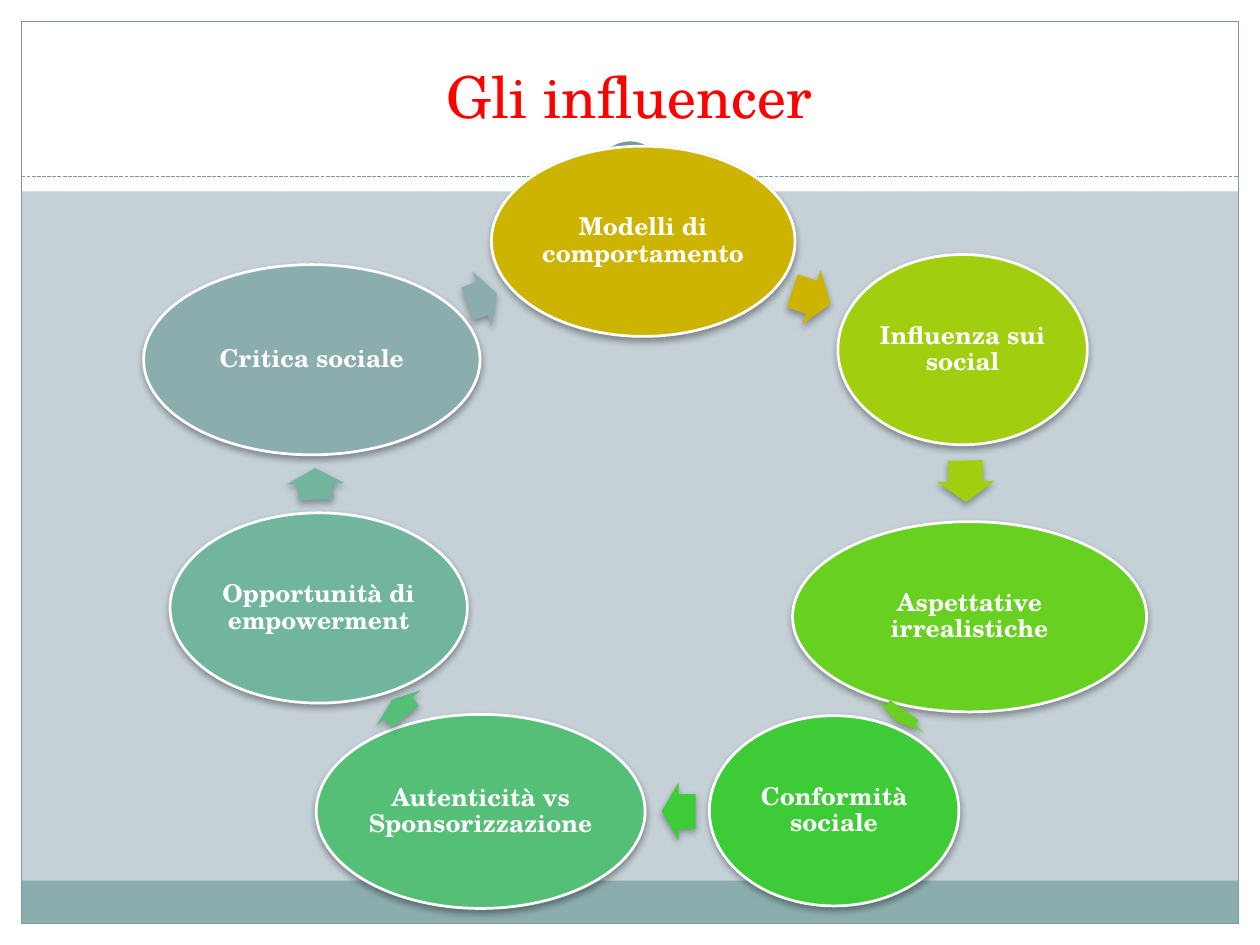
from lxml.etree import SubElement
from pptx import Presentation
from pptx.dml.color import RGBColor
from pptx.enum.dml import MSO_LINE
from pptx.enum.shapes import MSO_CONNECTOR, MSO_SHAPE
from pptx.enum.text import MSO_ANCHOR, PP_ALIGN
from pptx.oxml.ns import qn
from pptx.util import Inches, Pt

WIDTH, HEIGHT = 10, 7.5
MARGIN = 0.17
HEADER_HEIGHT = 1.52
RULE_Y = 1.4
FOOTER_HEIGHT = 0.34
FONT = "TeX Gyre Schola"
WHITE, TEAL, EDGE = "FFFFFF", "8CADAE", "7C999A"
BACKGROUND, TITLE_COLOUR = "C5D1D7", "FF0000"

TITLE = "Gli influencer"
ARROW_HEIGHT = 0.46
# label, colour, oval (left, top, width, height), arrow (left, top, length, rotation)
STEPS = [
    ("Modelli di comportamento", "CCB400", (3.9, 1.16, 2.41, 1.51), (6.28, 2.13, 0.32, 18.7)),
    ("Influenza sui social", "A1CF0F", (6.65, 2.02, 1.98, 1.51), (7.5, 3.59, 0.33, 88.8)),
    ("Aspettative irrealistiche", "67D021", (6.29, 4.14, 2.81, 1.51), (7.09, 5.45, 0.11, 124.7)),
    ("Conformità sociale", "3ECB38", (5.63, 5.68, 1.98, 1.51), (5.25, 6.21, 0.27, 180)),
    ("Autenticità vs Sponsorizzazione", "56BF77", (2.51, 5.67, 2.61, 1.54), (3.08, 5.39, 0.17, 231.4)),
    ("Opportunità di empowerment", "72B59F", (1.35, 4.07, 2.36, 1.51), (2.38, 3.61, 0.25, 268.6)),
    ("Critica sociale", TEAL, (1.14, 2.1, 2.67, 1.51), (3.7, 2.14, 0.25, 340.3)),
]


def colour(value):
    return RGBColor.from_string(value)


def add_shape(page, kind, at, fill=None, line=None, line_width=0.75):
    shape = page.shapes.add_shape(kind, *map(Inches, at))
    shape.shadow.inherit = False
    if fill:
        shape.fill.solid()
        shape.fill.fore_color.rgb = colour(fill)
    else:
        shape.fill.background()
    if line:
        shape.line.color.rgb = colour(line)
        shape.line.width = Pt(line_width)
    else:
        shape.line.fill.background()
    return shape


def add_soft_shadow(shape):
    effects = shape._element.spPr.find(qn("a:effectLst"))
    shadow = SubElement(effects, qn("a:outerShdw"), blurRad=str(Pt(4)), dist=str(Pt(2)),
                        dir="5400000", algn="ctr", rotWithShape="0")
    black = SubElement(shadow, qn("a:srgbClr"), val="000000")
    SubElement(black, qn("a:alpha"), val="35000")


def write(shape, text, size, ink, bold=False, anchor=MSO_ANCHOR.MIDDLE, inset=0.02, spacing=1.0):
    frame = shape.text_frame
    frame.word_wrap = True
    frame.vertical_anchor = anchor
    frame.margin_left = frame.margin_right = Inches(inset)
    frame.margin_top = frame.margin_bottom = Inches(inset)
    para = frame.paragraphs[0]
    para.alignment = PP_ALIGN.CENTER
    para.line_spacing = spacing
    span = para.add_run()
    span.text = text
    span.font.name = FONT
    span.font.size = Pt(size)
    span.font.bold = bold
    span.font.color.rgb = colour(ink)


def add_frame(page):
    """White margins, header, footer band, border, dashed rule and ring."""
    inner_width, inner_height = WIDTH - 2 * MARGIN, HEIGHT - 2 * MARGIN
    bands = [
        ((0, HEIGHT - MARGIN, WIDTH, MARGIN), WHITE),
        ((0, 0, WIDTH, HEADER_HEIGHT), WHITE),
        ((0, 0, MARGIN, HEIGHT), WHITE),
        ((WIDTH - MARGIN, 0, MARGIN, HEIGHT), WHITE),
        ((MARGIN, HEIGHT - MARGIN - FOOTER_HEIGHT, inner_width, FOOTER_HEIGHT), TEAL),
    ]
    for at, fill in bands:
        add_shape(page, MSO_SHAPE.RECTANGLE, at, fill)
    add_shape(page, MSO_SHAPE.RECTANGLE, (MARGIN, MARGIN, inner_width, inner_height), line=EDGE)

    ends = (MARGIN, RULE_Y, WIDTH - MARGIN, RULE_Y)
    rule = page.shapes.add_connector(MSO_CONNECTOR.STRAIGHT, *map(Inches, ends))
    rule.line.color.rgb = colour(EDGE)
    rule.line.width = Pt(0.75)
    rule.line.dash_style = MSO_LINE.SQUARE_DOT
    SubElement(rule._element.spPr, qn("a:effectLst"))

    ring_y = 1.38
    for diameter, line in ((0.67, None), (0.46, EDGE)):
        at = (WIDTH / 2 - diameter / 2, ring_y - diameter / 2, diameter, diameter)
        add_shape(page, MSO_SHAPE.OVAL, at, WHITE, line, 4)


def add_step(page, label, fill, oval_at, arrow_at):
    oval = add_shape(page, MSO_SHAPE.OVAL, oval_at, fill, WHITE, 1.57)
    add_soft_shadow(oval)
    write(oval, label, 14, WHITE, bold=True, spacing=0.9)

    left, top, length, rotation = arrow_at
    arrow = add_shape(page, MSO_SHAPE.RIGHT_ARROW, (left, top, length, ARROW_HEIGHT), fill)
    arrow.adjustments[0], arrow.adjustments[1] = 0.6, 0.5
    arrow.rotation = rotation
    add_soft_shadow(arrow)


def main():
    deck = Presentation()
    deck.slide_width, deck.slide_height = Inches(WIDTH), Inches(HEIGHT)
    page = deck.slides.add_slide(deck.slide_layouts[6])
    page.background.fill.solid()
    page.background.fill.fore_color.rgb = colour(BACKGROUND)

    add_frame(page)
    title = page.shapes.add_textbox(*map(Inches, (0.33, 0.25, 9.33, 0.83)))
    write(title, TITLE, 33, TITLE_COLOUR, anchor=MSO_ANCHOR.BOTTOM, inset=0.05)
    for step in STEPS:
        add_step(page, *step)
    deck.save("out.pptx")


if __name__ == "__main__":
    main()
